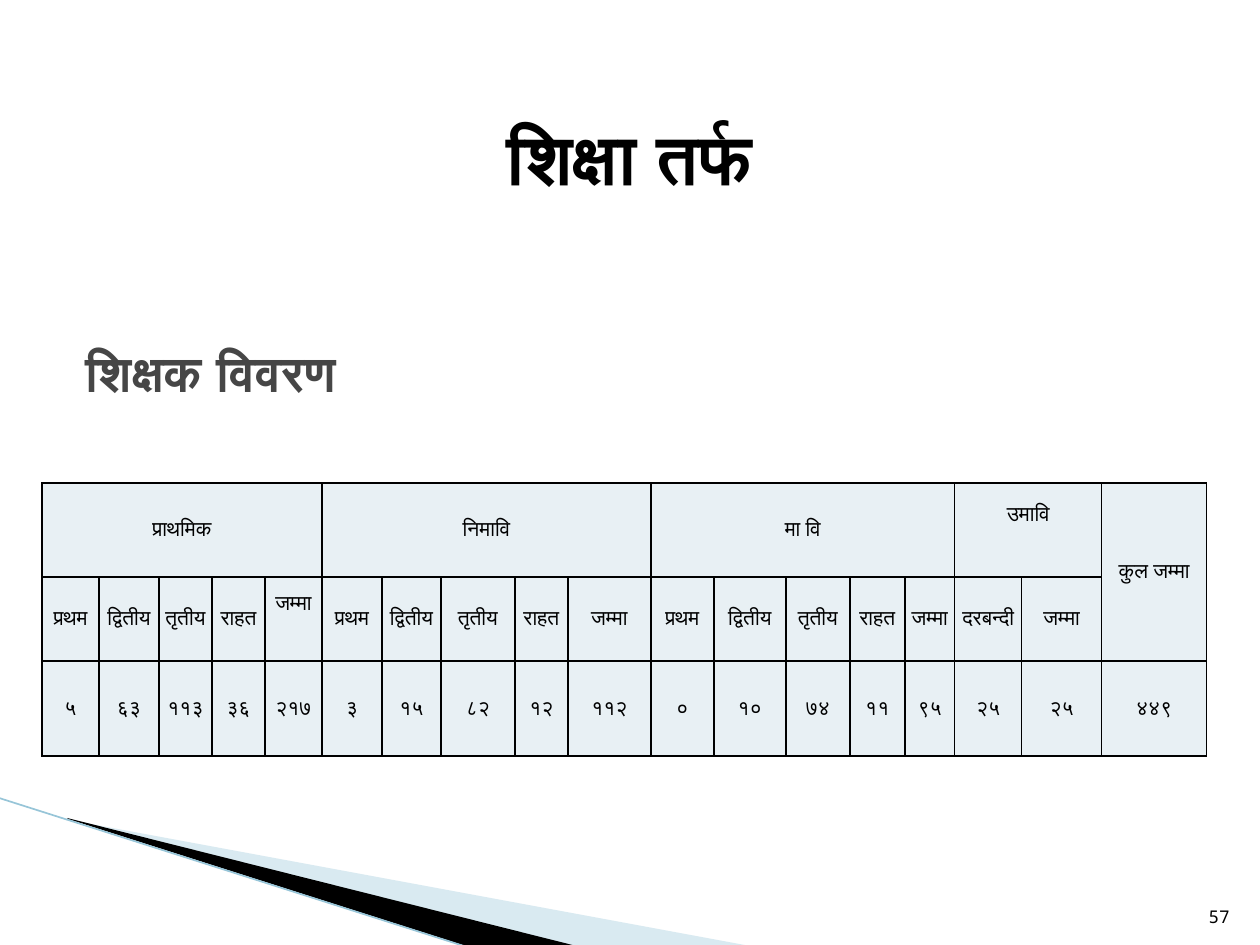
"""Build the slide on teacher numbers by school level."""
from lxml import etree
from pptx import Presentation
from pptx import util as u
from pptx.dml.color import RGBColor
from pptx.enum import shapes, text
from pptx.oxml import ns

SCALE = 914400 / 126
FONT = "Noto Sans Mono"
BLACK = RGBColor(0, 0, 0)
GREY = RGBColor(0x46, 0x46, 0x46)
PALE = RGBColor(0xE8, 0xF0, 0xF4)
SKY = RGBColor(0xA0, 0xCB, 0xDC)
EDGE = RGBColor(0x97, 0xC5, 0xD8)

COLS = [57, 60, 53, 53, 57, 60, 59, 74, 53, 83, 63, 72, 64, 55, 50, 67, 80, 105]
ROWS = [94, 84, 95]
LEVELS = [("प्राथमिक", 5), ("निमावि", 5), ("मा वि", 5), ("उमावि", 2)]
RANKS = ["प्रथम", "द्वितीय", "तृतीय", "राहत", "जम्मा"]
HEADS = RANKS * 3 + ["दरबन्दी", "जम्मा"]
COUNTS = "५ ६३ ११३ ३६ २१७ ३ १५ ८२ १२ ११२ ० १० ७४ ११ ९५ २५ २५ ४४९".split()
RAISED = {(0, 15), (1, 4)}


def px(num):
    """Turn px into EMU."""
    return u.Emu(round(num * SCALE))


def write(frame, words, size, color, align, bold=False):
    """Put one formatted paragraph in a text frame."""
    para = frame.paragraphs[0]
    para.text = words
    para.alignment = align
    font = para.font
    font.name, font.size, font.bold = FONT, u.Pt(size), bold
    font.color.rgb = color


def add_text(slide, box, words, size, align, anchor, bold=False):
    """Add a wrapped text box."""
    frame = slide.shapes.add_textbox(*map(px, box)).text_frame
    frame.word_wrap = True
    frame.vertical_anchor = anchor
    write(frame, words, size, BLACK, align, bold)


def set_title(slide, box, words):
    """Move and fill the title placeholder."""
    title = slide.shapes.title
    title.left, title.top, title.width, title.height = map(px, box)
    frame = title.text_frame
    frame.auto_size = text.MSO_AUTO_SIZE.NONE
    frame.vertical_anchor = text.MSO_ANCHOR.MIDDLE
    write(frame, words, 28, GREY, text.PP_ALIGN.LEFT, True)


def add_wedge(slide, points, color, alpha=100):
    """Add a filled outline without a line."""
    build = slide.shapes.build_freeform(*points[0], scale=SCALE)
    build.add_line_segments(points[1:], close=True)
    wedge = build.convert_to_shape()
    wedge.shadow.inherit = False
    wedge.line.fill.background()
    wedge.fill.solid()
    wedge.fill.fore_color.rgb = color
    if alpha < 100:
        tone = wedge._element.spPr.find(".//" + ns.qn("a:srgbClr"))
        etree.SubElement(tone, ns.qn("a:alpha"), val=str(alpha * 1000))


def add_line(slide, ends, color, width):
    """Add a straight line without a shadow."""
    line = slide.shapes.add_connector(shapes.MSO_CONNECTOR.STRAIGHT, *map(px, ends))
    line.line.color.rgb = color
    line.line.width = u.Pt(width)
    etree.SubElement(line._element.spPr, ns.qn("a:effectLst"))


def style_cell(cell, raised):
    """Give a cell its borders, fill, margins and anchor."""
    props = cell._tc.get_or_add_tcPr()
    for side in ("lnL", "lnR", "lnT", "lnB"):
        rule = etree.SubElement(props, ns.qn("a:" + side), w=str(u.Pt(1)))
        fill = etree.SubElement(rule, ns.qn("a:solidFill"))
        etree.SubElement(fill, ns.qn("a:srgbClr"), val=str(BLACK))
    cell.fill.solid()
    cell.fill.fore_color.rgb = PALE
    cell.margin_left = cell.margin_right = cell.margin_top = px(1)
    cell.margin_bottom = px(30 if raised else 0)
    cell.vertical_anchor = text.MSO_ANCHOR.MIDDLE


def add_grid(slide, left, top):
    """Add the table of teachers."""
    frame = slide.shapes.add_table(
        len(ROWS), len(COLS), px(left), px(top), px(sum(COLS)), px(sum(ROWS)))
    grid = frame.table
    grid.first_row = grid.horz_banding = False
    for col, width in zip(grid.columns, COLS):
        col.width = px(width)
    for row, height in zip(grid.rows, ROWS):
        row.height = px(height)

    words = {(1, col): head for col, head in enumerate(HEADS)}
    words.update({(2, col): count for col, count in enumerate(COUNTS)})
    start = 0
    for level, span in LEVELS:
        words[0, start] = level
        grid.cell(0, start).merge(grid.cell(0, start + span - 1))
        start += span
    words[0, start] = "कुल जम्मा"
    grid.cell(0, start).merge(grid.cell(1, start))

    for row in range(len(ROWS)):
        for col in range(len(COLS)):
            cell = grid.cell(row, col)
            style_cell(cell, (row, col) in RAISED)
            if (row, col) in words:
                write(cell.text_frame, words[row, col], 12, BLACK, text.PP_ALIGN.CENTER)


def main():
    """Build and save the slide."""
    deck = Presentation()
    deck.slide_width, deck.slide_height = px(1260), px(945)
    slide = deck.slides.add_slide(deck.slide_layouts[5])
    add_wedge(slide, [(69, 820), (750, 946), (575, 946), (69, 819)], SKY, 40)
    add_wedge(slide, [(67, 818), (576, 946), (469, 947), (68, 819)], BLACK)
    add_line(slide, (-1, 798, 467, 947), EDGE, 0.95)
    set_title(slide, (73, 273, 971, 197), "शिक्षक विवरण")
    add_grid(slide, 42, 483)
    add_text(slide, (388, 108, 483, 97), "शिक्षा तर्फ", 40,
             text.PP_ALIGN.CENTER, text.MSO_ANCHOR.TOP, True)
    add_text(slide, (1192, 883, 50, 50), "57", 10,
             text.PP_ALIGN.RIGHT, text.MSO_ANCHOR.BOTTOM)
    deck.save("out.pptx")


if __name__ == "__main__":
    main()
